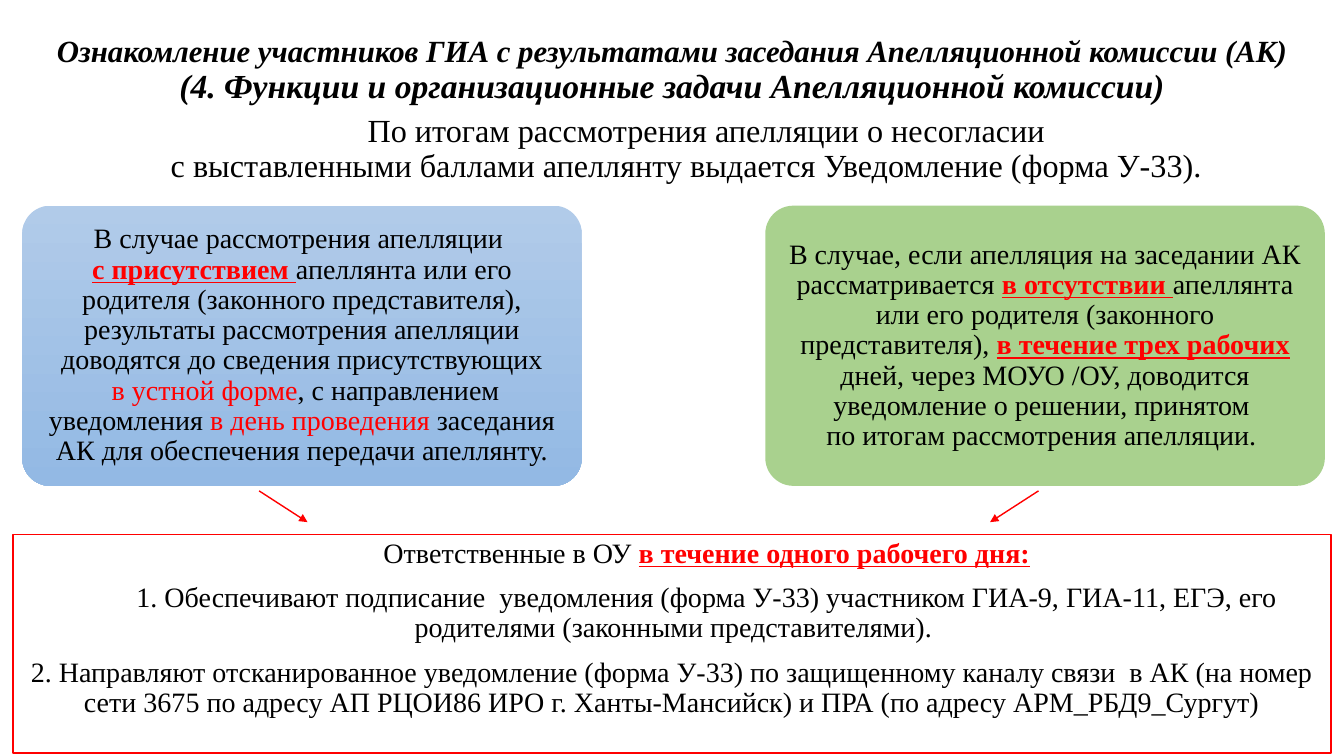
from dataclasses import dataclass

from lxml import etree
from pptx import Presentation
from pptx import util as u
from pptx.dml.color import RGBColor
from pptx.enum import shapes, text
from pptx.oxml import ns

FONT = "Times New Roman"
BLACK, RED, WHITE = "000000", "FF0000", "FFFFFF"
CARD_TOP, CARD_WIDTH, CARD_HEIGHT = 2.04, 5.55, 2.78


@dataclass
class Run:
    words: str
    size: float = 20
    color: str = BLACK
    bold: bool = False
    italic: bool = False
    underline: bool = False


@dataclass
class Card:
    left: float
    fills: tuple[str, ...]
    runs: list[Run]


@dataclass
class Arrow:
    start: tuple[float, float]
    end: tuple[float, float]


def rgb(value: str) -> RGBColor:
    return RGBColor.from_string(value)


def key(words: str) -> Run:
    return Run(words, color=RED, bold=True, underline=True)


def write(shape, paragraphs: list[list[Run]], *, anchor=text.MSO_ANCHOR.MIDDLE,
          indents=((0, 0),), gap: float = 0, inset: tuple[float, float] = (0.1, 0.05)) -> None:
    """Fill a shape with centred paragraphs; indents are (left, first line) in inches."""
    frame = shape.text_frame
    frame.word_wrap = True
    frame.vertical_anchor = anchor
    frame.margin_left = frame.margin_right = u.Inches(inset[0])
    frame.margin_top = frame.margin_bottom = u.Inches(inset[1])
    for number, (runs, (left, first)) in enumerate(zip(paragraphs, indents)):
        paragraph = frame.add_paragraph() if number else frame.paragraphs[0]
        paragraph.alignment = text.PP_ALIGN.CENTER
        paragraph.line_spacing = 0.9
        paragraph.space_before = u.Pt(gap if number else 0)
        properties = paragraph._p.get_or_add_pPr()
        properties.set("marL", str(u.Inches(left)))
        properties.set("indent", str(u.Inches(first)))
        for run in runs:
            for line, words in enumerate(run.words.split("\n")):
                if line:
                    paragraph.add_line_break()
                if not words:
                    continue
                piece = paragraph.add_run()
                piece.text = words
                font = piece.font
                font.name, font.size = FONT, u.Pt(run.size)
                font.bold, font.italic, font.underline = run.bold, run.italic, run.underline
                font.color.rgb = rgb(run.color)


def add_text_box(slide, left: float, top: float, width: float, height: float):
    return slide.shapes.add_textbox(*map(u.Inches, (left, top, width, height)))


def add_box(slide, kind, left: float, top: float, width: float, height: float):
    box = slide.shapes.add_shape(kind, *map(u.Inches, (left, top, width, height)))
    box.shadow.inherit = False
    return box


def draw_card(slide, card: Card) -> None:
    box = add_box(slide, shapes.MSO_SHAPE.ROUNDED_RECTANGLE,
                  card.left, CARD_TOP, CARD_WIDTH, CARD_HEIGHT)
    box.adjustments[0] = 0.1
    box.line.fill.background()
    if len(card.fills) > 1:
        box.fill.gradient()
        box.fill.gradient_angle = 270
        for stop, color in zip(box.fill.gradient_stops, card.fills):
            stop.color.rgb = rgb(color)
    else:
        box.fill.solid()
        box.fill.fore_color.rgb = rgb(card.fills[0])
    write(box, [card.runs], inset=(0.06, 0.06))


def draw_arrow(slide, arrow: Arrow) -> None:
    line = slide.shapes.add_connector(
        shapes.MSO_CONNECTOR.STRAIGHT, *map(u.Inches, arrow.start + arrow.end))
    line.line.color.rgb = rgb(RED)
    line.line.width = u.Pt(1)
    head = etree.SubElement(line.line._get_or_add_ln(), ns.qn("a:tailEnd"))
    head.set("type", "triangle")
    etree.SubElement(line._element.spPr, ns.qn("a:effectLst"))


TITLE = [
    Run("Ознакомление участников ГИА с результатами заседания Апелляционной комиссии (АК)\n",
        size=22, bold=True, italic=True),
    Run("(4. Функции и организационные задачи Апелляционной комиссии)",
        size=24, bold=True, italic=True),
]
NOTICE = [Run("По итогам рассмотрения апелляции о несогласии \n"
              "с выставленными баллами апеллянту выдается Уведомление (форма У-33). ", size=23)]
CARDS = [
    Card(0.22, ("B1CBE9", "93B9E4"), [
        Run("В случае рассмотрения апелляции \n"),
        key("с присутствием "),
        Run("апеллянта или его родителя (законного представителя), результаты "
            "рассмотрения апелляции доводятся до сведения присутствующих\n "),
        Run("в устной форме", color=RED),
        Run(", с направлением уведомления "),
        Run("в день проведения ", color=RED),
        Run("заседания АК для обеспечения передачи апеллянту."),
    ]),
    Card(7.59, ("A9D18E",), [
        Run("В случае, если апелляция на заседании АК рассматривается "),
        key("в отсутствии "),
        Run("апеллянта или его родителя (законного представителя), "),
        key("в течение трех рабочих "),
        Run("дней, через МОУО /ОУ, доводится уведомление о решении, принятом \n"
            "по итогам рассмотрения апелляции. "),
    ]),
]
ARROWS = [Arrow((2.57, 4.87), (3.05, 5.18)), Arrow((10.3, 4.87), (9.82, 5.18))]
DUTIES = [
    [Run("Ответственные в ОУ "), key("в течение одного рабочего дня:")],
    [Run("1. Обеспечивают подписание  уведомления (форма У-33) участником ГИА-9, ГИА-11, ЕГЭ, "
         "его родителями (законными представителями). ")],
    [Run("2. Направляют отсканированное уведомление (форма У-33) по защищенному каналу связи  "
         "в АК (на номер сети 3675 по адресу АП РЦОИ86 ИРО г. Ханты-Мансийск) и ПРА "
         "(по адресу АРМ_РБД9_Сургут)")],
]


def main() -> None:
    deck = Presentation()
    deck.slide_width, deck.slide_height = u.Inches(13.33), u.Inches(7.5)
    slide = deck.slides.add_slide(deck.slide_layouts[6])

    # Heading and introduction
    write(add_text_box(slide, 0.26, 0.35, 12.81, 0.7), [TITLE])
    write(add_text_box(slide, 0.93, 1.06, 11.85, 1.15), [NOTICE],
          anchor=text.MSO_ANCHOR.TOP, indents=((0, 0.39),), inset=(0.1, 0.08))

    # Duties of the school staff
    duties = add_box(slide, shapes.MSO_SHAPE.RECTANGLE, 0.13, 5.3, 13.07, 2.17)
    duties.fill.solid()
    duties.fill.fore_color.rgb = rgb(WHITE)
    duties.line.color.rgb = rgb(RED)
    duties.line.width = u.Pt(1)
    write(duties, DUTIES, anchor=text.MSO_ANCHOR.TOP, gap=10,
          indents=((0.1, 0.59), (0.1, 0.59), (0, 0)))

    # Two cases leading to the duties
    for card in CARDS:
        draw_card(slide, card)
    for arrow in ARROWS:
        draw_arrow(slide, arrow)

    deck.save("out.pptx")


if __name__ == "__main__":
    main()
